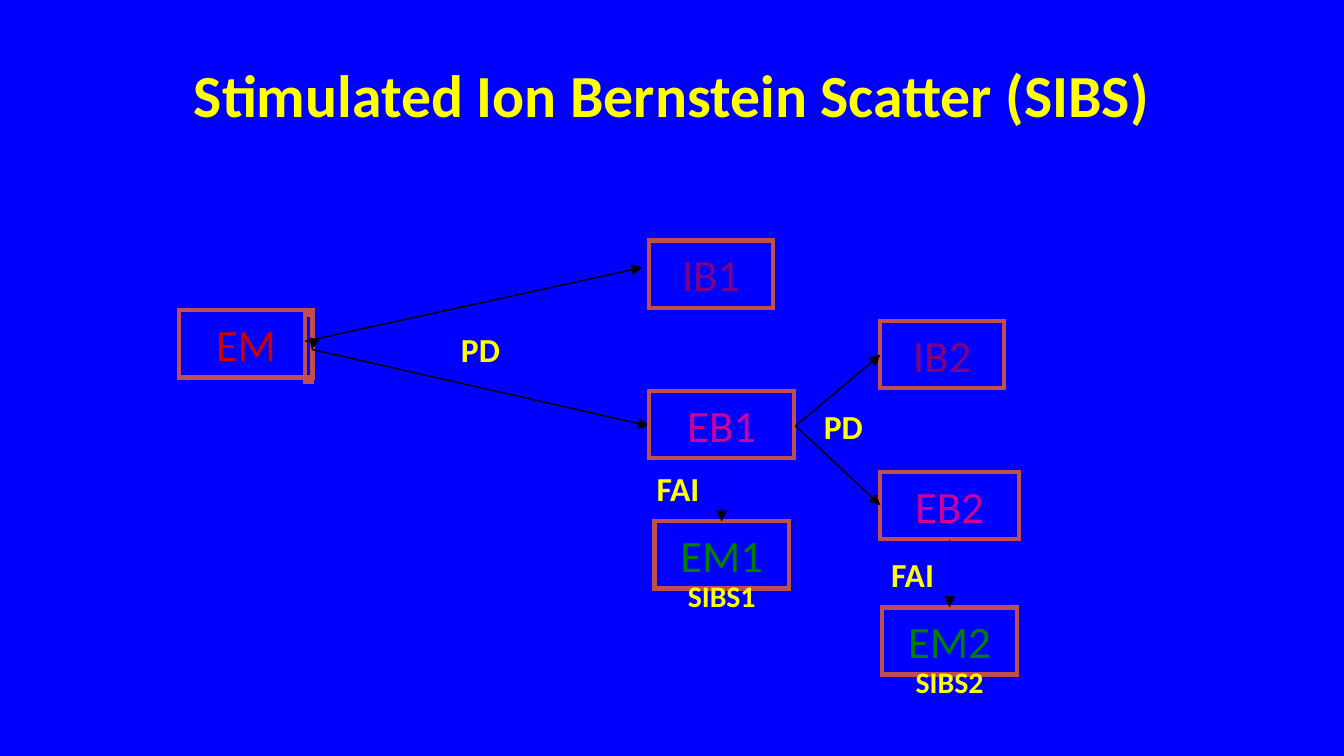
from lxml import etree
from pptx import Presentation
from pptx.dml.color import RGBColor
from pptx.enum import shapes, text
from pptx.oxml import ns
from pptx.util import Inches, Pt

FONT = "Calibri"
YELLOW, BRICK, BLACK = "FFFF00", "C0504D", "000000"
NODE_HEIGHT = 0.5


def colour(hex_string):
    return RGBColor.from_string(hex_string)


def write(shape, words, size, hex_string, bold=False):
    """Put one centred line of text into a shape."""
    frame = shape.text_frame
    frame.word_wrap = True
    para = frame.paragraphs[0]
    para.text = words
    para.alignment = text.PP_ALIGN.CENTER
    para.font.name = FONT
    para.font.size = Pt(size)
    para.font.bold = bold
    para.font.color.rgb = colour(hex_string)


def add_outline(page, left, top, width):
    box = page.shapes.add_shape(
        shapes.MSO_SHAPE.RECTANGLE,
        Inches(left), Inches(top), Inches(width), Inches(NODE_HEIGHT))
    box.shadow.inherit = False
    box.fill.background()
    box.line.color.rgb = colour(BRICK)
    box.line.width = Pt(2.25)
    line = box.line._get_or_add_ln()
    etree.SubElement(line, ns.qn("a:miter"), lim="800000")
    return box


def add_node(page, name, left, top, width, hex_string):
    box = add_outline(page, left, top, width)
    box.text_frame.vertical_anchor = text.MSO_ANCHOR.TOP
    box.text_frame.auto_size = text.MSO_AUTO_SIZE.SHAPE_TO_FIT_TEXT
    write(box, name, 24, hex_string)


def add_label(page, words, left, top, width=0.75, height=0.4, size=18):
    box = page.shapes.add_textbox(
        Inches(left), Inches(top), Inches(width), Inches(height))
    box.text_frame.auto_size = text.MSO_AUTO_SIZE.SHAPE_TO_FIT_TEXT
    write(box, words, size, YELLOW, bold=True)


def add_arrow(page, start, end):
    arrow = page.shapes.add_connector(
        shapes.MSO_CONNECTOR.STRAIGHT, *map(Inches, (*start, *end)))
    arrow.line.color.rgb = colour(BLACK)
    arrow.line.width = Pt(0.75)
    line = arrow.line._get_or_add_ln()
    etree.SubElement(line, ns.qn("a:tailEnd"), type="triangle")
    etree.SubElement(arrow._element.spPr, ns.qn("a:effectLst"))


def add_title(page, left, top, width, height):
    title = page.shapes.title
    title.left, title.top = Inches(left), Inches(top)
    title.width, title.height = Inches(width), Inches(height)
    title.text_frame.vertical_anchor = text.MSO_ANCHOR.MIDDLE
    write(title, "Stimulated Ion Bernstein Scatter (SIBS)", 32, YELLOW, bold=True)


def add_pump(page, left, top):
    """Draw the pump wave and its decay into the first stage."""
    add_node(page, "EM", left, top, 1, "CC0000")
    add_outline(page, left + 0.94, top + 0.03, 0.05)
    corner = (left + 0.99, top + 0.29)
    add_arrow(page, (left + 1, top + 0.25), corner)
    add_arrow(page, (left + 0.94, top + 0.23), (left + 3.45, top - 0.32))
    add_arrow(page, corner, (left + 3.5, top + 0.86))
    add_label(page, "PD", left + 1.87, top + 0.09)


def add_stage(page, number, left, top, eb_width, em_drop, fai_shift):
    """Draw the IB and EB waves, and the EM wave scattered from EB."""
    eb_top, em_top = top + 1.12, top + em_drop
    middle = left + eb_width / 2
    em_left = middle - 0.5
    add_node(page, f"IB{number}", left, top, 0.92, "800080")
    add_node(page, f"EB{number}", left, eb_top, eb_width, "CC0099")
    add_node(page, f"EM{number}", em_left, em_top, 1, "008000")
    add_arrow(page, (middle, eb_top + NODE_HEIGHT + 0.01), (middle, em_top))
    add_label(page, "FAI", em_left - fai_shift, top + em_drop - 0.45)
    add_label(page, f"SIBS{number}", em_left + 0.04, em_top + 0.37,
              0.92, 0.37, 16)


def add_second_decay(page, left, top):
    """Draw the split of EB1 into IB2 and EB2."""
    for rise in (-0.53, 0.59):
        add_arrow(page, (left, top), (left + 0.63, top + rise))
    add_label(page, "PD", left - 0.02, top - 0.2)


def main():
    deck = Presentation()
    deck.slide_width = Inches(10)
    deck.slide_height = deck.slide_width * 9 // 16
    page = deck.slides.add_slide(deck.slide_layouts[5])
    page.background.fill.solid()
    page.background.fill.fore_color.rgb = colour("0000FF")

    add_title(page, 0.5, 0.23, 9, 0.94)
    add_pump(page, 1.33, 2.31)
    add_stage(page, 1, 4.83, 1.79, eb_width=1.08, em_drop=2.09, fai_shift=0.2)
    add_stage(page, 2, 6.55, 2.39, eb_width=1.03, em_drop=2.13, fai_shift=0.15)
    add_second_decay(page, 5.92, 3.17)
    deck.save("out.pptx")


if __name__ == "__main__":
    main()
